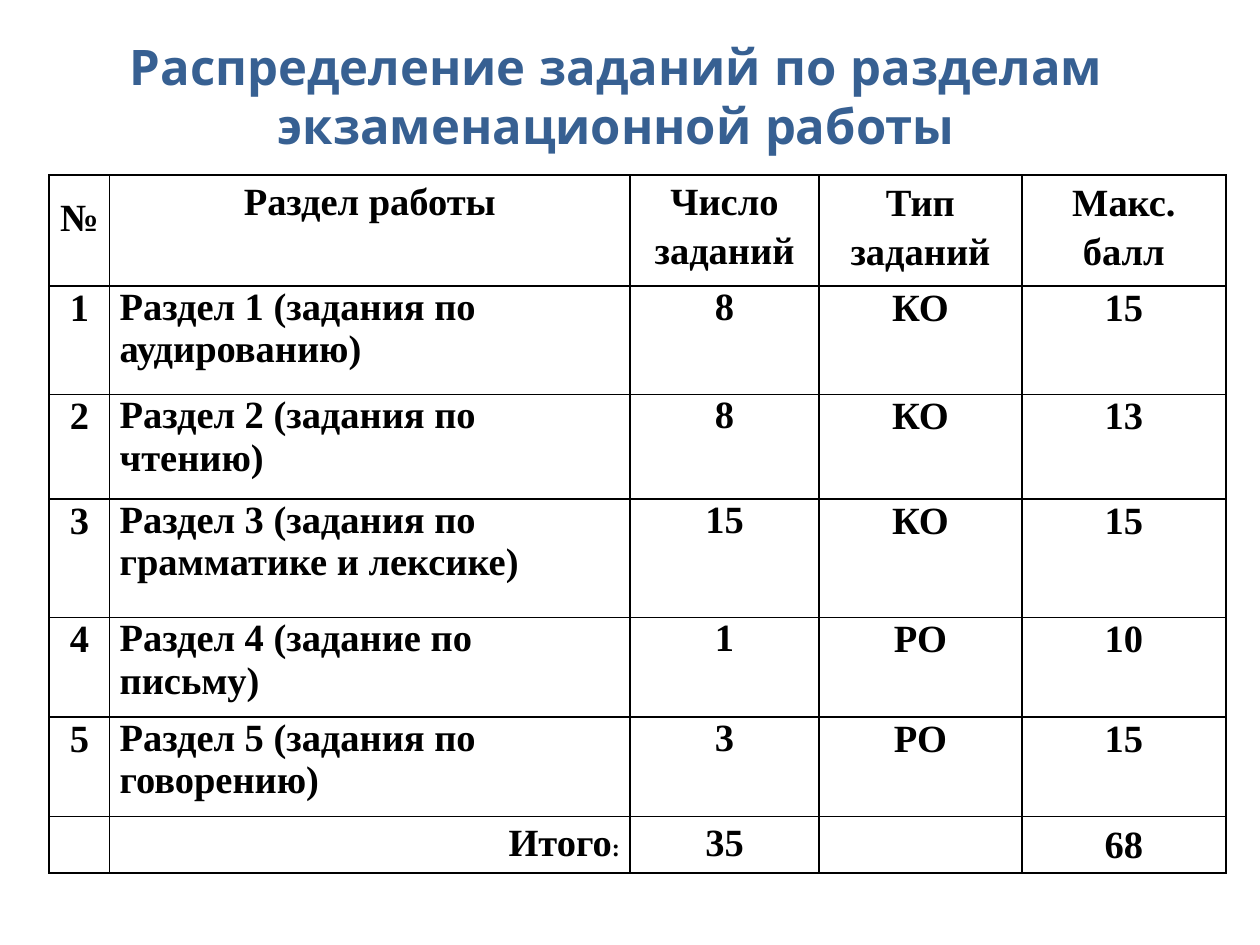
from lxml.etree import SubElement
from pptx import Presentation
from pptx.dml.color import RGBColor
from pptx.enum.text import MSO_ANCHOR, PP_ALIGN as Align
from pptx.oxml.ns import qn
from pptx.util import Inches, Pt

COLORS = {"title": "376092", "ink": "000000"}
COLUMN_WIDTHS = [0.48, 4.13, 1.5, 1.61, 1.62]
ROW_HEIGHTS = [0.88, 0.86, 0.83, 0.94, 0.79, 0.79, 0.45]
ROWS = [
    ["№", "Раздел работы", "Число заданий", "Тип заданий", "Макс.\vбалл"],
    ["1", "Раздел 1 (задания по аудированию)", "8", "КО", "15"],
    ["2", "Раздел 2 (задания по чтению)", "8", "КО", "13"],
    ["3", "Раздел 3 (задания по грамматике и лексике)", "15", "КО", "15"],
    ["4", "Раздел 4 (задание по письму)", "1", "РО", "10"],
    ["5", "Раздел 5 (задания по\nговорению)", "3", "РО", "15"],
    ["", "Итого", "35", "", "68"],
]


def style_span(span, font_name, size, color):
    """Make a run bold in the given font, size and colour."""
    span.font.name = font_name
    span.font.size = Pt(size)
    span.font.bold = True
    span.font.color.rgb = RGBColor.from_string(COLORS[color])


def add_title(page, left, top, width, height):
    """Place the centred slide title."""
    box = page.shapes.add_textbox(left, top, width, height)
    frame = box.text_frame
    frame.word_wrap = True
    frame.vertical_anchor = MSO_ANCHOR.MIDDLE
    frame.text = "Распределение заданий по разделам экзаменационной работы"
    para = frame.paragraphs[0]
    para.alignment = Align.CENTER
    style_span(para.runs[0], "Quicksand", 28, "title")


def outline_cell(cell):
    """Draw a thin border on all four sides and remove the fill."""
    properties = cell._tc.get_or_add_tcPr()
    for side in ("a:lnL", "a:lnR", "a:lnT", "a:lnB"):
        line = SubElement(properties, qn(side), w=str(Pt(1)))
        fill = SubElement(line, qn("a:solidFill"))
        SubElement(fill, qn("a:srgbClr"), val=COLORS["ink"])
    cell.fill.background()


def fill_cell(cell, text, row, column):
    """Write one cell with the insets, alignment and spacing of its place."""
    last_row = len(ROWS) - 1
    wide = column in (1, 2)
    cell.margin_left = cell.margin_right = Inches(0.08 if wide else 0.01)
    cell.margin_top = cell.margin_bottom = Inches(0 if wide else 0.01)
    cell.text = text
    outline_cell(cell)
    for para in cell.text_frame.paragraphs:
        para.alignment = Align.CENTER
        if column == 1 and row > 0:
            para.alignment = Align.RIGHT if row == last_row else Align.LEFT
        if row in (0, last_row):
            para.line_spacing = 1.5 if text == "№" else 1.15
        for span in para.runs:
            style_span(span, "Times New Roman", 22, "ink")


def add_sections_table(page, left, top, width, height):
    """Place the table of exam sections with its total row."""
    frame = page.shapes.add_table(len(ROWS), len(COLUMN_WIDTHS), left, top, width, height)
    table = frame.table
    table.first_row = table.horz_banding = False
    for column, size in zip(table.columns, COLUMN_WIDTHS):
        column.width = Inches(size)
    for row, size in zip(table.rows, ROW_HEIGHTS):
        row.height = Inches(size)
    for row, texts in enumerate(ROWS):
        for column, text in enumerate(texts):
            fill_cell(table.cell(row, column), text, row, column)
    total = table.cell(len(ROWS) - 1, 1).text_frame.paragraphs[0]
    colon = total.add_run()
    colon.text = ":"
    style_span(colon, "Times New Roman", 14, "ink")


def main():
    """Build and save the deck."""
    deck = Presentation()
    deck.slide_width, deck.slide_height = Inches(10), Inches(7.5)
    page = deck.slides.add_slide(deck.slide_layouts[6])
    add_title(page, Inches(0.39), Inches(0.13), Inches(9), Inches(1.25))
    add_sections_table(page, Inches(0.39), Inches(1.39), Inches(9.34), Inches(5.54))
    deck.save("out.pptx")


if __name__ == "__main__":
    main()
